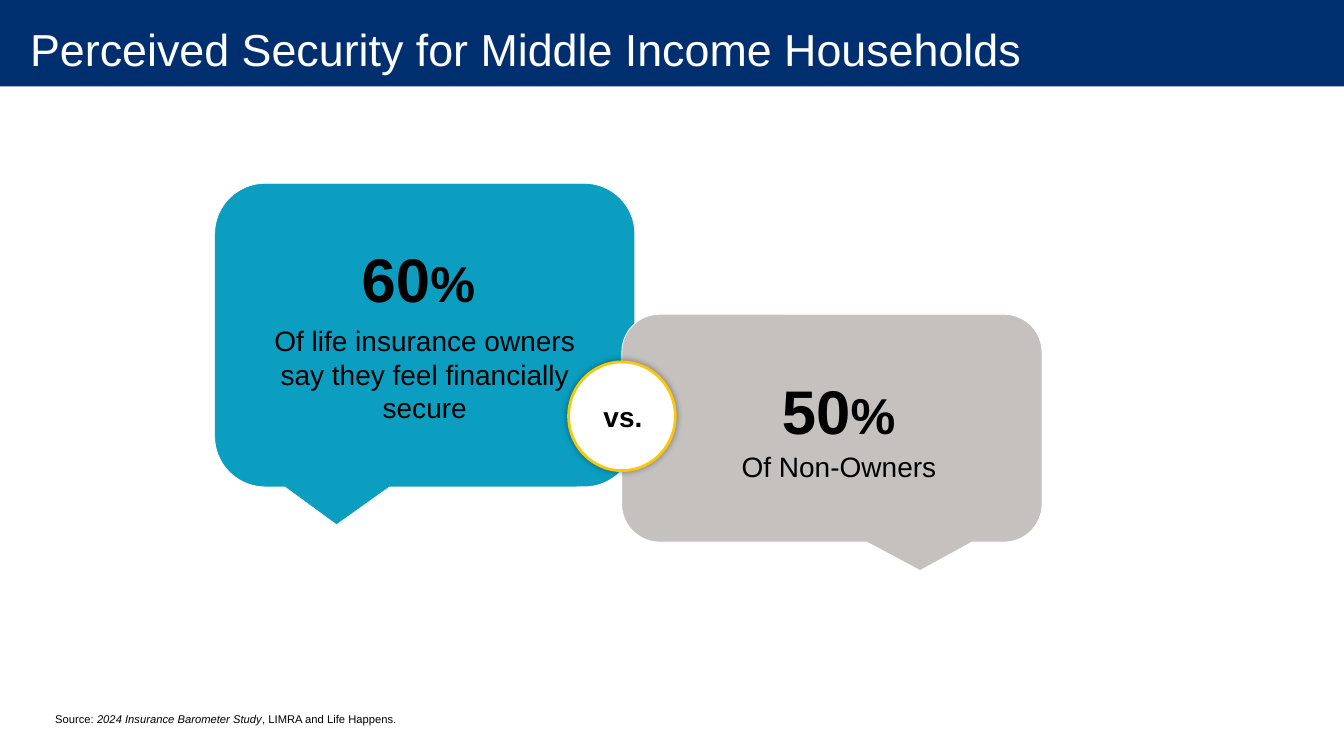
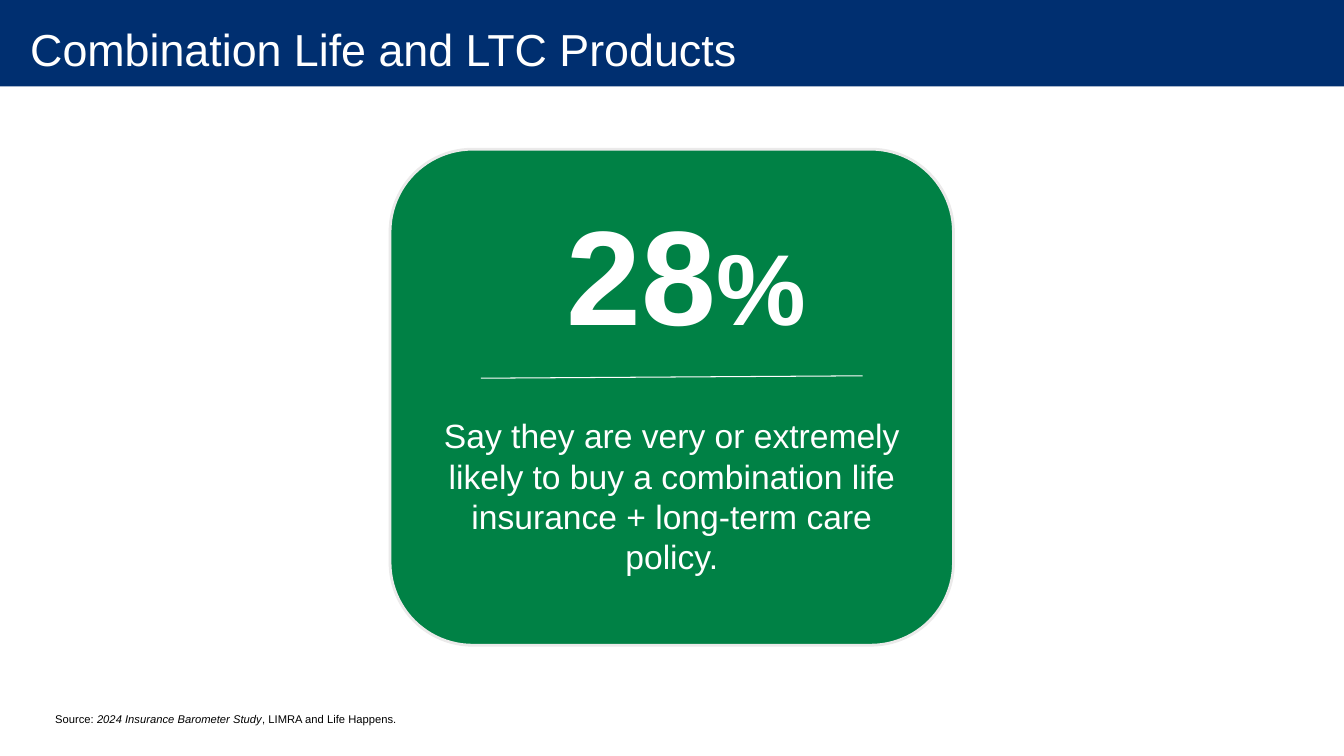
"""Build two slides on life insurance ownership and financial security."""
from lxml.etree import SubElement
from pptx import Presentation
from pptx.dml.color import RGBColor
from pptx.enum.shapes import MSO_CONNECTOR, MSO_SHAPE
from pptx.enum.text import MSO_ANCHOR, MSO_AUTO_SIZE, PP_ALIGN
from pptx.oxml.ns import qn
from pptx.util import Cm, Pt

COLORS = {
    "navy": "002F70", "teal": "0B9EC1", "gray": "C4C1BF", "green": "008145",
    "gold": "FAC809", "pale": "EBEAEA", "white": "FFFFFF", "black": "000000",
}
RGB = {name: RGBColor.from_string(value) for name, value in COLORS.items()}
TITLE_FRAME = {
    "margin_left": Cm(0.76), "margin_right": Cm(0.51), "margin_top": 0, "margin_bottom": 0,
    "vertical_anchor": MSO_ANCHOR.MIDDLE, "auto_size": MSO_AUTO_SIZE.NONE, "word_wrap": False,
}
SOURCE = [
    ("Source: ", {"size": Pt(8)}),
    ("2024 Insurance Barometer Study", {"size": Pt(8), "italic": True}),
    (", LIMRA and Life Happens.", {"size": Pt(8)}),
]


def add_box(s, kind, box, fill, line=None, width=0):
    sp = s.shapes.add_shape(kind, *map(Cm, box))
    sp.shadow.inherit = False
    sp.fill.solid()
    sp.fill.fore_color.rgb = RGB[fill]
    if line:
        sp.line.color.rgb = RGB[line]
        sp.line.width = Pt(width)
    else:
        sp.line.fill.background()
    return sp


def add_text(s, box, runs, color="black", align=PP_ALIGN.CENTER):
    tf = s.shapes.add_textbox(*map(Cm, box)).text_frame
    tf.word_wrap = True
    p = tf.paragraphs[0]
    p.alignment = align
    for text, fmt in runs:
        r = p.add_run()
        r.text = text
        r.font.name = "Arial"
        r.font.color.rgb = RGB[color]
        for key, value in fmt.items():
            setattr(r.font, key, value)


prs = Presentation()
prs.slide_width, prs.slide_height = Cm(33.87), Cm(19.05)
layout = prs.slide_layouts[5]
slides = []
for title in ("Perceived Security for Middle Income Households", "Combination Life and LTC Products"):
    s = prs.slides.add_slide(layout)
    slides.append(s)
    sp = s.shapes.title
    sp.left, sp.top, sp.width, sp.height = 0, 0, prs.slide_width, Cm(2.46)
    tf = sp.text_frame
    for key, value in TITLE_FRAME.items():
        setattr(tf, key, value)
    p = tf.paragraphs[0]
    p.alignment = PP_ALIGN.LEFT
    r = p.add_run()
    r.text = title
    r.font.name, r.font.size = "Arial", Pt(32)
    r.font.color.rgb = RGB["white"]
    add_text(s, (1.14, 17.83, 18.9, 0.61), SOURCE, align=PP_ALIGN.LEFT)

band = add_box(slides[0], MSO_SHAPE.RECTANGLE, (0, 0, 33.87, 2.18), "navy")
layout.shapes.element.insert(2, band.element)

s = slides[0]
callouts = [
    ((5.41, 4.62, 10.59, 7.65), "teal", -0.21, (7.98, 5.94, 5.13, 2.13), "60",
     (6.63, 8.03, 8.15, 2.82), "Of life insurance owners say they feel financially secure"),
    ((15.67, 7.92, 10.59, 5.74), "gray", 0.21, (18.57, 9.27, 5.13, 2.13), "50",
     (16.84, 11.2, 8.61, 1.12), "Of Non-Owners"),
]
for box, fill, tail, number_box, number, label_box, label in callouts:
    sp = add_box(s, MSO_SHAPE.ROUNDED_RECTANGULAR_CALLOUT, box, fill, "white", 0.5)
    sp.adjustments[0] = tail
    add_text(s, number_box, [(number, {"size": Pt(44), "bold": True}),
                             ("%", {"size": Pt(36), "bold": True})])
    add_text(s, label_box, [(label, {"size": Pt(20)})])

circle = add_box(s, MSO_SHAPE.FLOWCHART_CONNECTOR, (14.33, 9.12, 2.69, 2.74), "white", "gold", 2)
effects = circle.element.spPr.find(qn("a:effectLst"))
shadow = SubElement(effects, qn("a:outerShdw"), blurRad=str(Pt(5)), dist="0", algn="ctr", rotWithShape="0")
shade = SubElement(shadow, qn("a:srgbClr"), val=COLORS["black"])
SubElement(shade, qn("a:alpha"), val="40000")
add_text(s, (14.38, 9.93, 2.64, 1.12), [("vs.", {"size": Pt(20), "bold": True})])

s = slides[1]
add_box(s, MSO_SHAPE.ROUNDED_RECTANGLE, (9.83, 3.76, 14.2, 12.5), "green", "pale", 2)
add_text(s, (11.51, 4.7, 11.56, 4.37), [("28", {"size": Pt(96), "bold": True}),
                                        ("%", {"size": Pt(72), "bold": True})], "white")
add_text(s, (10.82, 10.34, 12.22, 4.37),
         [("Say they are very or extremely likely to buy a combination life "
           "insurance + long-term care policy.", {"size": Pt(24)})], "white")
divider = s.shapes.add_connector(MSO_CONNECTOR.STRAIGHT, Cm(12.12), Cm(9.53), Cm(21.74), Cm(9.47))
divider.line.color.rgb = RGB["white"]
divider.line.width = Pt(0.75)
SubElement(divider.element.spPr, qn("a:effectLst"))

prs.save("out.pptx")
